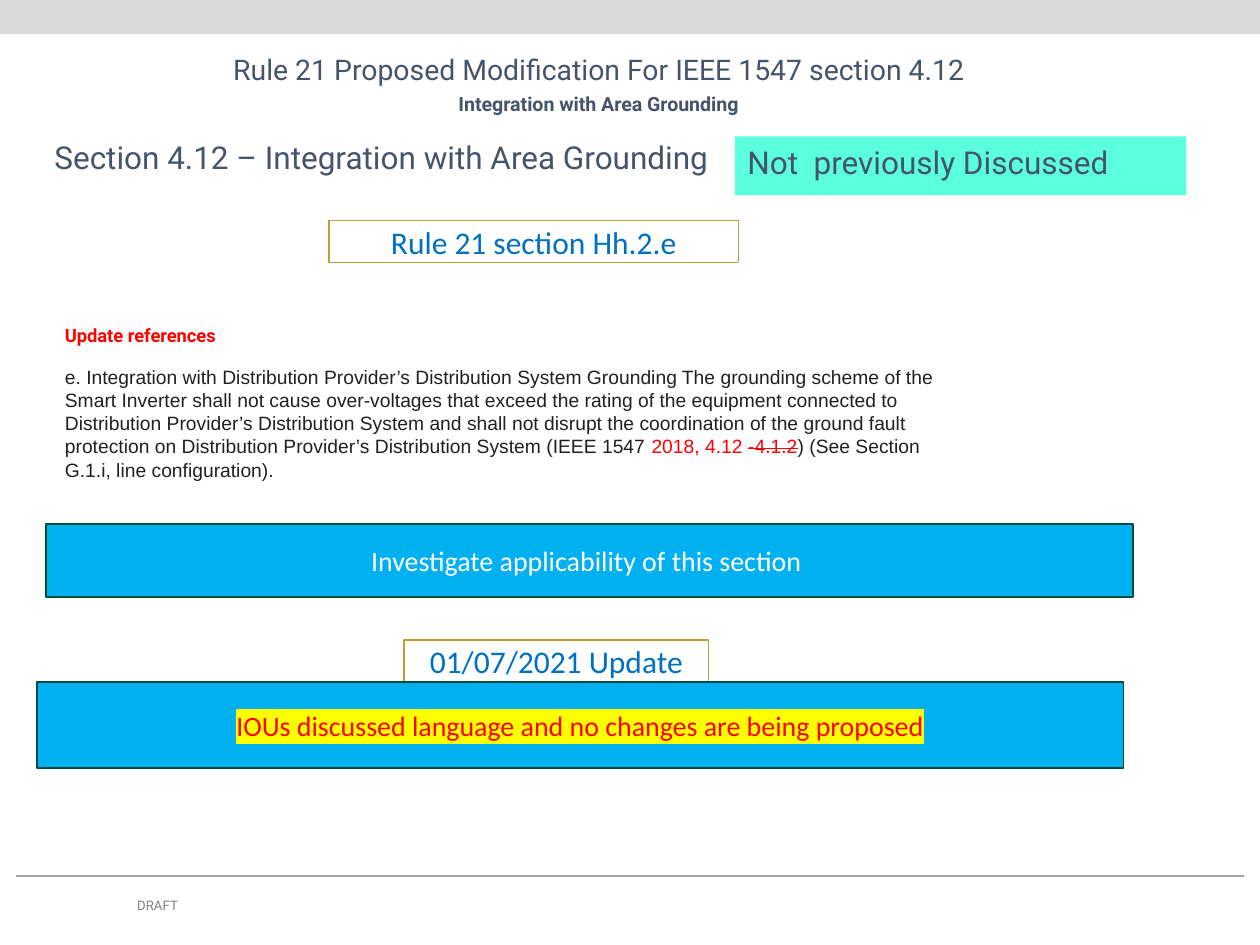
"""Build the Rule 21 slide on integration with area grounding."""
import pptx
import pptx.util
import pptx.dml.color
import pptx.enum.shapes
import pptx.enum.text
import pptx.oxml
import pptx.oxml.ns

Pt = pptx.util.Pt
ALIGN = pptx.enum.text.PP_ALIGN
ANCHOR = pptx.enum.text.MSO_ANCHOR
LEFT, MID = ALIGN.LEFT, ALIGN.CENTER
SLATE, RED, INK = "44546A", "FF0000", "231F20"
GOLD, SKY, PINE, BLUE = "BB9D3A", "00B0F0", "004B3C", "0070C0"


def tint(code):
    return pptx.dml.color.RGBColor.from_string(code)


def box(spot, rows, shade=None, edge=None, frame=None, para=None):
    spot = [Pt(n) for n in spot]
    if shade or edge:
        shape = slide.shapes.add_shape(pptx.enum.shapes.MSO_SHAPE.RECTANGLE, *spot)
        shape.shadow.inherit = False
        if shade:
            shape.fill.solid()
            shape.fill.fore_color.rgb = tint(shade)
        else:
            shape.fill.background()
        if edge:
            shape.line.color.rgb = tint(edge)
            shape.line.width = Pt(1)
        else:
            shape.line.fill.background()
    else:
        shape = slide.shapes.add_textbox(*spot)
    body = shape.text_frame
    look = {"word_wrap": True, "vertical_anchor": ANCHOR.TOP, **(frame or {})}
    for key, value in look.items():
        setattr(body, key, value)
    for i, runs in enumerate(rows):
        line = body.add_paragraph() if i else body.paragraphs[0]
        for key, value in {"alignment": LEFT, **(para or {})}.items():
            setattr(line, key, value)
        for text, face, size, code, *extra in runs:
            run = line.add_run()
            run.text = text
            font = {"name": face, "size": Pt(size), "bold": "bold" in extra}
            for key, value in font.items():
                setattr(run.font, key, value)
            run.font.color.rgb = tint(code)
            props = run.font._element
            if "strike" in extra:
                props.set("strike", "sngStrike")
            if "mark" in extra:
                mark = pptx.oxml.parse_xml(
                    f'<a:highlight {pptx.oxml.ns.nsdecls("a")}>'
                    '<a:srgbClr val="FFFF00"/></a:highlight>')
                props.find(pptx.oxml.ns.qn("a:solidFill")).addnext(mark)


deck = pptx.Presentation()
deck.slide_width, deck.slide_height = Pt(720), Pt(540)
slide = deck.slides.add_slide(deck.slide_layouts[6])

after = {"space_after": Pt(6)}
center = {"alignment": MID}
middle = {"vertical_anchor": ANCHOR.MIDDLE}
tight = {"margin_left": Pt(5), "margin_right": Pt(5),
         "margin_top": Pt(3), "margin_bottom": Pt(3)}
grow = {"auto_size": pptx.enum.text.MSO_AUTO_SIZE.SHAPE_TO_FIT_TEXT}

box((0, 0, 720, 19.4), [], shade="D9D9D9")
rule = slide.shapes.add_connector(
    pptx.enum.shapes.MSO_CONNECTOR.STRAIGHT, Pt(9), Pt(500.5), Pt(711), Pt(500.5))
rule.line.color.rgb = tint("A6A6A6")
rule.line.width = Pt(1)
rule._element.spPr.append(
    pptx.oxml.parse_xml(f'<a:effectLst {pptx.oxml.ns.nsdecls("a")}/>'))
box((9, 502.5, 162, 29), [[("DRAFT", "Roboto", 7.5, "808080")]],
    frame=middle | tight, para=center)

box((42, 30, 600, 42), [
    [("Rule 21 Proposed Modification For IEEE 1547 section 4.12", "Roboto", 16.2, SLATE)],
    [("Integration with Area Grounding", "Roboto", 11.2, SLATE, "bold")],
], para=center | after | {"line_spacing": 0.8})
box((24, 75.6, 450, 42),
    [[("Section 4.12 – Integration with Area Grounding", "Roboto", 18, SLATE)]],
    para=after)
box((30, 181.5, 414, 24),
    [[("Update references", "Roboto", 10.5, RED, "bold")]], para=after)
box((30, 205.2, 516, 74), [[
    ("e. Integration with Distribution Provider’s Distribution System Grounding "
     "The grounding scheme of the Smart Inverter shall not cause over-voltages "
     "that exceed the rating of the equipment connected to Distribution Provider’s "
     "Distribution System and shall not disrupt the coordination of the ground "
     "fault protection on Distribution Provider’s Distribution System (IEEE 1547 ",
     "Arial", 11, INK),
    ("2018, 4.12 ", "Arial", 11, RED),
    ("-4.1.2", "Arial", 11, RED, "strike"),
    (") (See Section G.1.i, line configuration).", "Arial", 11, INK),
]], frame=grow)
box((420, 78, 258, 33.5), [[("Not  previously Discussed", "Roboto", 18, SLATE)]],
    shade="5CFFDD", para=after)

for spot, shade, edge, run in (
    ((188, 126, 234, 24), None, GOLD, ("Rule 21 section Hh.2.e", "Calibri", 18, BLUE)),
    ((26.3, 299.3, 621, 42), SKY, PINE,
     ("Investigate applicability of this section ", "Calibri", 16, "FFFFFF")),
    ((231, 365.7, 174, 24), None, GOLD, ("01/07/2021 Update", "Calibri", 18, BLUE)),
    ((21, 389.7, 621, 49), SKY, PINE,
     ("IOUs discussed language and no changes are being proposed",
      "Calibri", 16, RED, "mark")),
):
    box(spot, [[run]], shade, edge, middle, center)

deck.save("out.pptx")
